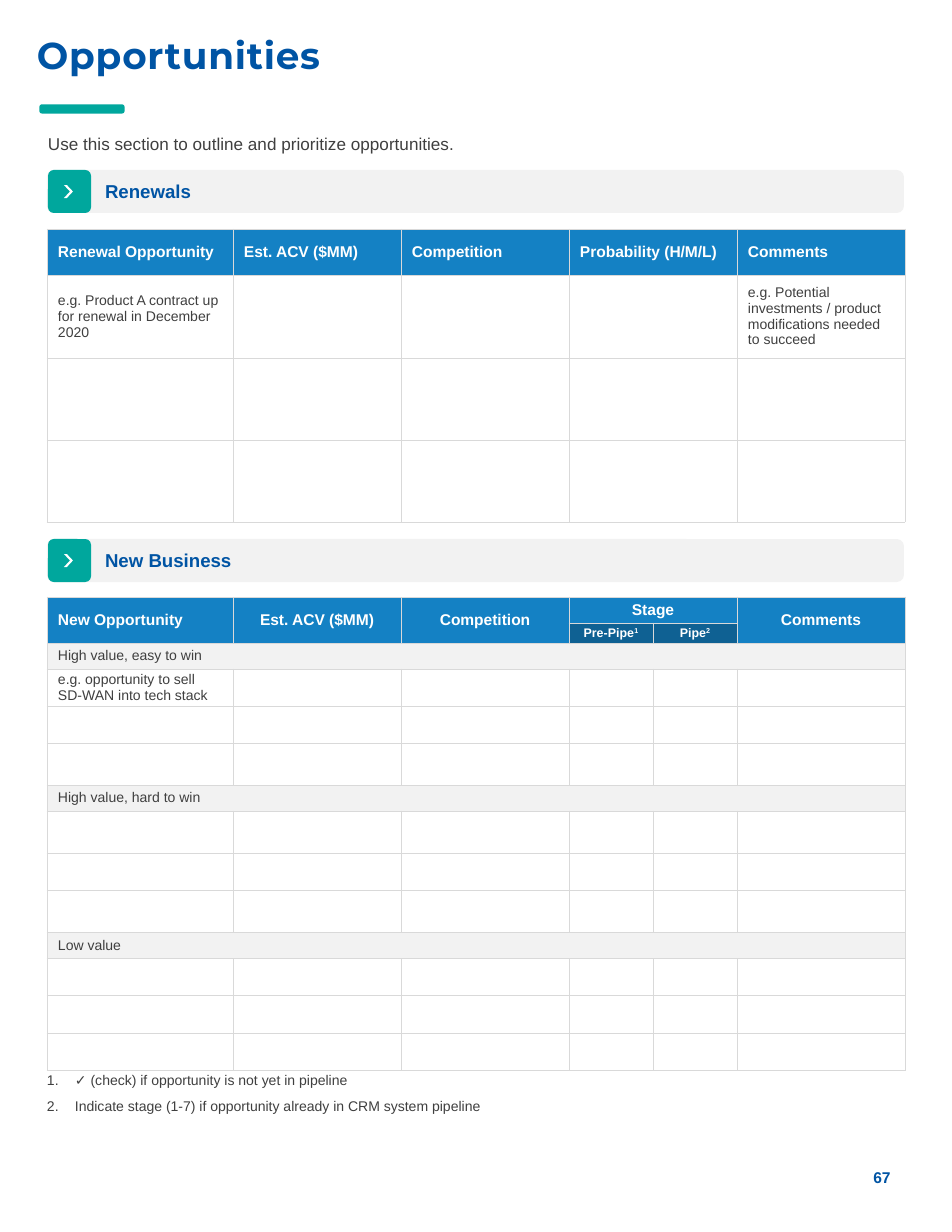
import pptx
import pptx.dml.color
import pptx.enum.shapes
import pptx.enum.text
import pptx.oxml
import pptx.oxml.ns
import pptx.util

# Content
TITLE = "Opportunities"
INTRO = "Use this section to outline and prioritize opportunities."
PAGE = "67"
SECTIONS = [("Renewals", 170), ("New Business", 539)]
RENEWAL_HEAD = ["Renewal Opportunity", "Est. ACV ($MM)", "Competition",
                "Probability (H/M/L)", "Comments"]
RENEWAL_NOTES = {0: "e.g. Product A contract up for renewal in December 2020",
                 4: "e.g. Potential investments / product modifications needed to succeed"}
BUSINESS_HEAD = {0: "New Opportunity", 1: "Est. ACV ($MM)", 2: "Competition",
                 3: "Stage", 5: "Comments"}
STAGES = {3: ("Pre-Pipe", "1"), 4: ("Pipe", "2")}
GROUPS = {2: "High value, easy to win", 6: "High value, hard to win", 10: "Low value"}
EXAMPLE = "e.g. opportunity to sell SD-WAN into tech stack"
FOOTNOTES = ["✓ (check) if opportunity is not yet in pipeline",
             "Indicate stage (1-7) if opportunity already in CRM system pipeline"]

# Grid, px
LEFT, WIDTH = 47, 857
RENEWAL_COLS = [186, 168, 168, 168, 168]
RENEWAL_ROWS = [46, 83, 82, 82]
BUSINESS_COLS = [186, 168, 168, 84, 84, 168]
BUSINESS_ROWS = [26, 20, 26, 37, 37, 42, 26, 43, 37, 42, 26, 37, 38, 37]

NAVY, TEAL, BLUE, DEEP = "0054A4", "00A79D", "1481C4", "0F6193"
GREY, RULE, INK, WHITE = "F2F2F2", "D9D9D9", "3F3F3F", "FFFFFF"
SHAPE = pptx.enum.shapes.MSO_SHAPE
MIDDLE = pptx.enum.text.MSO_ANCHOR.MIDDLE
ALIGN = pptx.enum.text.PP_ALIGN


def px(n):
    return pptx.util.Emu(round(n * 914400 / 112))


def rgb(color):
    return pptx.dml.color.RGBColor.from_string(color)


def add_run(p, text, size, color, bold=False, font="Arial", **attrs):
    r = p.add_run()
    r.text = text
    r.font.size = pptx.util.Pt(size)
    r.font.name = font
    r.font.bold = bold
    r.font.color.rgb = rgb(color)
    for name, value in attrs.items():
        r._r.get_or_add_rPr().set(name, value)


def set_frame(tf, left=0, right=0):
    tf.word_wrap = True
    tf.vertical_anchor = MIDDLE
    tf.margin_left, tf.margin_right = px(left), px(right)
    tf.margin_top = tf.margin_bottom = 0


def add_text(s, x, y, w, h, left=0):
    tf = s.shapes.add_textbox(px(x), px(y), px(w), px(h)).text_frame
    set_frame(tf, left)
    return tf


def add_block(s, kind, x, y, w, h, color, adj=None):
    sp = s.shapes.add_shape(kind, px(x), px(y), px(w), px(h))
    sp.shadow.inherit = False
    sp.fill.solid()
    sp.fill.fore_color.rgb = rgb(color)
    sp.line.fill.background()
    if adj is not None:
        sp.adjustments[0] = adj
    return sp


def add_grid(s, y, cols, rows):
    frame = s.shapes.add_table(len(rows), len(cols), px(LEFT), px(y),
                               px(sum(cols)), px(sum(rows)))
    table = frame.table
    table.first_row = table.horz_banding = False
    for col, w in zip(table.columns, cols):
        col.width = px(w)
    for row, h in zip(table.rows, rows):
        row.height = px(h)
    for cell in table.iter_cells():
        for side in "LRTB":
            cell._tc.get_or_add_tcPr().append(pptx.oxml.parse_xml(
                f'<a:ln{side} {pptx.oxml.ns.nsdecls("a")} w="6350"><a:solidFill>'
                f'<a:srgbClr val="{RULE}"/></a:solidFill></a:ln{side}>'))
        paint(cell, WHITE)
        cell.vertical_anchor = MIDDLE
        cell.margin_left = cell.margin_right = px(11)
        cell.margin_top = cell.margin_bottom = 0
    return table


def paint(cell, color):
    cell.fill.solid()
    cell.fill.fore_color.rgb = rgb(color)


def write(cell, text, size=9, color=INK, bold=False, align=ALIGN.LEFT):
    p = cell.text_frame.paragraphs[0]
    p.alignment = align
    add_run(p, text, size, color, bold)
    return p


def add_renewals(s):
    table = add_grid(s, 229, RENEWAL_COLS, RENEWAL_ROWS)
    for c, text in enumerate(RENEWAL_HEAD):
        paint(table.cell(0, c), BLUE)
        write(table.cell(0, c), text, 10, WHITE, True)
    for c, text in RENEWAL_NOTES.items():
        write(table.cell(1, c), text)


def add_new_business(s):
    table = add_grid(s, 597, BUSINESS_COLS, BUSINESS_ROWS)
    for c in range(len(BUSINESS_COLS)):
        for r in (0, 1):
            paint(table.cell(r, c), DEEP if r and c in STAGES else BLUE)
    for c, text in BUSINESS_HEAD.items():
        cell = table.cell(0, c)
        cell.merge(table.cell(0, 4) if c in STAGES else table.cell(1, c))
        write(cell, text, 10, WHITE, True, ALIGN.CENTER if c else ALIGN.LEFT)
    for c, (text, mark) in STAGES.items():
        cell = table.cell(1, c)
        cell.margin_left = cell.margin_right = 0
        p = write(cell, text, 8, WHITE, True, ALIGN.CENTER)
        add_run(p, mark, 8, WHITE, True, baseline="30000")
    for r, text in GROUPS.items():
        cell = table.cell(r, 0)
        cell.merge(table.cell(r, len(BUSINESS_COLS) - 1))
        paint(cell, GREY)
        write(cell, text)
    write(table.cell(3, 0), EXAMPLE)


def add_section(s, name, y):
    band = add_block(s, SHAPE.ROUNDED_RECTANGLE, LEFT, y, WIDTH, 43, GREY, 0.165)
    set_frame(band.text_frame, 56, 11)
    p = band.text_frame.paragraphs[0]
    p.alignment = ALIGN.LEFT
    add_run(p, name, 12, NAVY, True)
    add_block(s, SHAPE.ROUNDED_RECTANGLE, LEFT + 1, y, 43, 43, TEAL, 0.132)
    add_block(s, SHAPE.CHEVRON, LEFT + 17, y + 15, 9, 13, WHITE, 0.672)


def add_footnotes(s):
    tf = add_text(s, LEFT, 1071, WIDTH, 43)
    for i, text in enumerate(FOOTNOTES):
        p = tf.add_paragraph() if i else tf.paragraphs[0]
        pPr = p._p.get_or_add_pPr()
        pPr.set("marL", "228600")
        pPr.set("indent", "-228600")
        pPr.append(pptx.oxml.parse_xml(
            f'<a:buAutoNum {pptx.oxml.ns.nsdecls("a")} type="arabicPeriod"/>'))
        if i:
            p.space_before = pptx.util.Pt(6)
        add_run(p, text, 9, INK)


def main():
    prs = pptx.Presentation()
    prs.slide_width, prs.slide_height = px(952), px(1232)
    s = prs.slides.add_slide(prs.slide_layouts[6])

    # Title, accent bar and intro
    bar = add_block(s, SHAPE.ROUNDED_RECTANGLE, 41, 106, 82, 6, TEAL)
    bar.line.color.rgb = rgb(TEAL)
    bar.line.width = pptx.util.Pt(2)
    tf = add_text(s, 26, 0, 926, 110, left=11)
    add_run(tf.paragraphs[0], TITLE, 24, NAVY, True, "Montserrat", spc="50")
    tf = add_text(s, 48, 133, WIDTH, 22)
    add_run(tf.paragraphs[0], INTRO, 11, INK)

    # Sections and tables
    for name, y in SECTIONS:
        add_section(s, name, y)
    add_renewals(s)
    add_new_business(s)

    # Footnotes and page number
    add_footnotes(s)
    p = add_text(s, 859, 1150, 46, 54).paragraphs[0]
    p.alignment = ALIGN.CENTER
    add_run(p, PAGE, 10, NAVY, True)

    prs.save("out.pptx")


if __name__ == "__main__":
    main()
